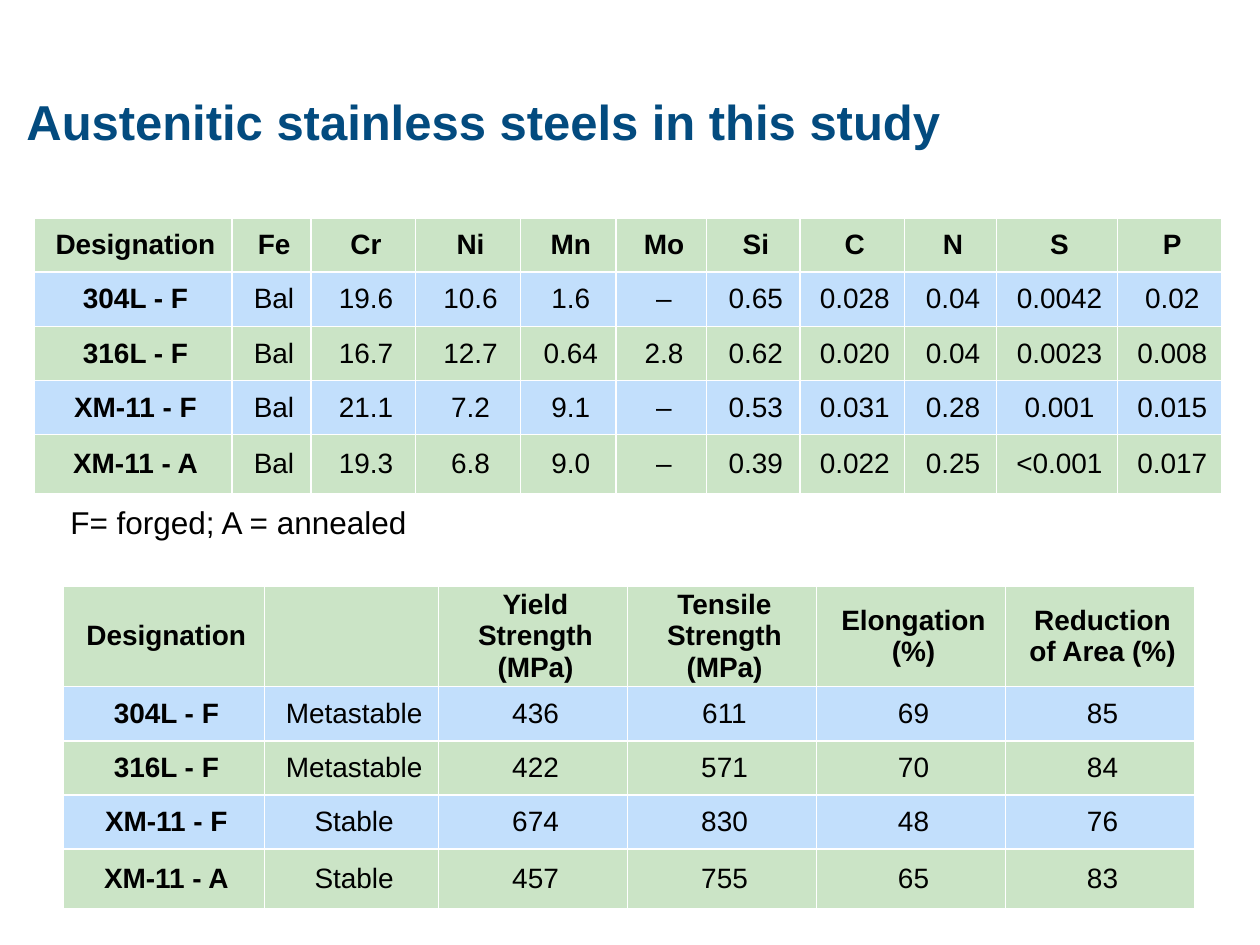
from lxml import etree
from pptx import Presentation
from pptx.dml.color import RGBColor
from pptx.enum import text
from pptx.oxml import ns
from pptx.util import Inches, Pt

FONT = "Arial"
BLACK, WHITE, NAVY = "000000", "FFFFFF", "034B7F"
BANDS = ("CBE4C6", "C2DFFC")
BODY_ROWS = [0.43, 0.43, 0.43, 0.47]

COMPOSITION = [
    ["Designation", "Fe", "Cr", "Ni", "Mn", "Mo", "Si", "C", "N", "S", "P"],
    ["304L - F", "Bal", "19.6", "10.6", "1.6", "–", "0.65", "0.028", "0.04", "0.0042", "0.02"],
    ["316L - F", "Bal", "16.7", "12.7", "0.64", "2.8", "0.62", "0.020", "0.04", "0.0023", "0.008"],
    ["XM-11 - F", "Bal", "21.1", "7.2", "9.1", "–", "0.53", "0.031", "0.28", "0.001", "0.015"],
    ["XM-11 - A", "Bal", "19.3", "6.8", "9.0", "–", "0.39", "0.022", "0.25", "<0.001", "0.017"],
]
COMPOSITION_WIDTHS = [1.57, 0.63, 0.83, 0.83, 0.76, 0.72, 0.74, 0.83, 0.73, 0.96, 0.83]

STRENGTH = [
    ["Designation", "", "Yield Strength (MPa)", "Tensile Strength (MPa)",
     "Elongation (%)", "Reduction of Area (%)"],
    ["304L - F", "Metastable", "436", "611", "69", "85"],
    ["316L - F", "Metastable", "422", "571", "70", "84"],
    ["XM-11 - F", "Stable", "674", "830", "48", "76"],
    ["XM-11 - A", "Stable", "457", "755", "65", "83"],
]
STRENGTH_WIDTHS = [1.6, 1.38] + [1.5] * 4


def color(value):
    return RGBColor.from_string(value)


def add_run(paragraph, words, size, fill=BLACK, bold=False):
    run = paragraph.add_run()
    run.text = words
    run.font.name = FONT
    run.font.size = Pt(size)
    run.font.bold = bold
    run.font.color.rgb = color(fill)


def add_borders(cell, fill=WHITE, width=1):
    properties = cell._tc.get_or_add_tcPr()
    for side in ("lnL", "lnR", "lnT", "lnB"):
        line = etree.SubElement(properties, ns.qn(f"a:{side}"), w=str(Pt(width)))
        solid = etree.SubElement(line, ns.qn("a:solidFill"))
        etree.SubElement(solid, ns.qn("a:srgbClr"), val=fill)


def format_cell(cell, words, fill, bold):
    add_borders(cell)
    cell.fill.solid()
    cell.fill.fore_color.rgb = color(fill)
    cell.vertical_anchor = text.MSO_ANCHOR.MIDDLE
    cell.margin_left = cell.margin_right = Inches(0.07)
    cell.margin_top = cell.margin_bottom = 0
    paragraph = cell.text_frame.paragraphs[0]
    paragraph.alignment = text.PP_ALIGN.CENTER
    paragraph._p.get_or_add_pPr().set("marL", str(Inches(0.04)))
    if words:
        add_run(paragraph, words, 16, bold=bold)


def add_steel_table(slide, left, top, data, widths, header_height):
    """Banded table with a bold header row and a bold first column."""
    heights = [header_height] + BODY_ROWS
    frame = slide.shapes.add_table(
        len(data), len(widths), Inches(left), Inches(top),
        Inches(sum(widths)), Inches(sum(heights)))
    table = frame.table
    table.horz_banding = False
    for column, width in zip(table.columns, widths):
        column.width = Inches(width)
    for row, height in zip(table.rows, heights):
        row.height = Inches(height)
    for i, values in enumerate(data):
        for j, words in enumerate(values):
            format_cell(table.cell(i, j), words, BANDS[i % 2], bold=i == 0 or j == 0)


def place_title(slide, left, top, width, height):
    title = slide.shapes.title
    title.left, title.top = Inches(left), Inches(top)
    title.width, title.height = Inches(width), Inches(height)
    frame = title.text_frame
    frame.word_wrap = True
    frame.vertical_anchor = text.MSO_ANCHOR.TOP
    frame.margin_top = Inches(0.1)
    paragraph = frame.paragraphs[0]
    paragraph.alignment = text.PP_ALIGN.LEFT
    add_run(paragraph, "Austenitic stainless steels in this study", 28, NAVY, bold=True)


def add_key(slide, left, top, width, height):
    box = slide.shapes.add_textbox(Inches(left), Inches(top), Inches(width), Inches(height))
    box.text_frame.word_wrap = False
    box.text_frame.auto_size = text.MSO_AUTO_SIZE.SHAPE_TO_FIT_TEXT
    add_run(box.text_frame.paragraphs[0], "F= forged; A = annealed", 18)


def main():
    presentation = Presentation()
    presentation.slide_width, presentation.slide_height = Inches(10), Inches(7.5)
    slide = presentation.slides.add_slide(presentation.slide_layouts[5])
    place_title(slide, 0.11, 0.63, 9.89, 0.86)
    add_steel_table(slide, 0.27, 1.73, COMPOSITION, COMPOSITION_WIDTHS, 0.43)
    add_key(slide, 0.46, 3.94, 2.89, 0.4)
    add_steel_table(slide, 0.5, 4.65, STRENGTH, STRENGTH_WIDTHS, 0.79)
    presentation.save("out.pptx")


if __name__ == "__main__":
    main()
